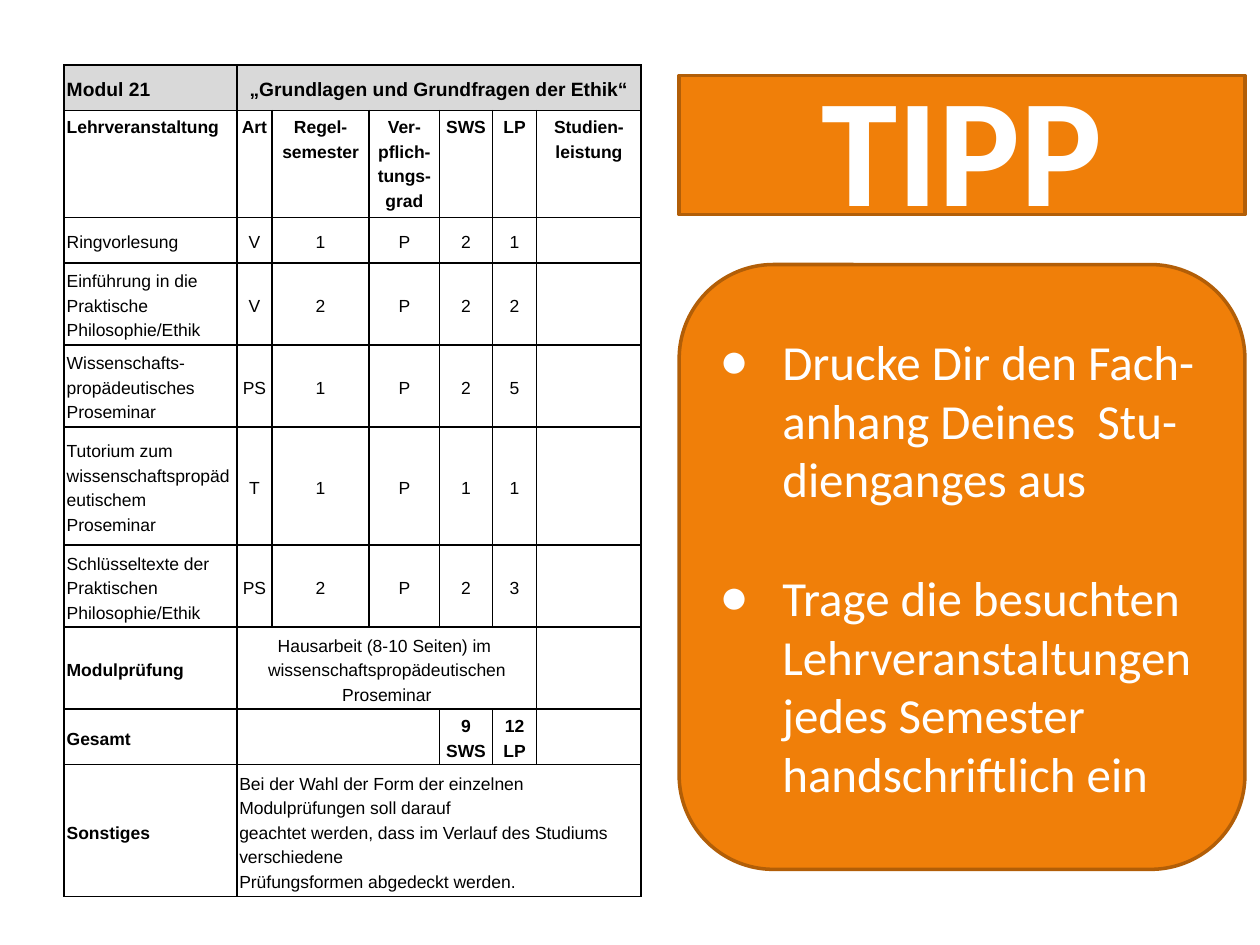
from dataclasses import dataclass

from lxml.etree import SubElement
from pptx import Presentation
from pptx.dml.color import RGBColor
from pptx.enum.text import MSO_ANCHOR as Anchor, MSO_AUTO_SIZE as AutoSize, PP_ALIGN as Align
from pptx.oxml import parse_xml
from pptx.oxml.ns import nsdecls, qn
from pptx.util import Inches, Pt

BLACK = RGBColor(0x00, 0x00, 0x00)
WHITE = RGBColor(0xFF, 0xFF, 0xFF)
GREY = RGBColor(0xD9, 0xD9, 0xD9)
ORANGE = RGBColor(0xF0, 0x7F, 0x09)
BROWN = RGBColor(0xB2, 0x5E, 0x07)

SLIDE_WIDTH, SLIDE_HEIGHT = Inches(10), Inches(7.5)
COLUMNS = [1.37, 0.28, 0.77, 0.56, 0.42, 0.35, 0.83]
ROWS = [0.36, 0.85, 0.36, 0.65, 0.65, 0.94, 0.65, 0.65, 0.44, 1.05]
TITLE_ROW, HEAD_ROW, EXAM_ROW = 0, 1, 7


@dataclass
class Area:
    """A rectangle in shares of the slide's size."""
    left: float
    top: float
    width: float
    height: float

    def box(self) -> tuple[int, int, int, int]:
        return (round(self.left * SLIDE_WIDTH), round(self.top * SLIDE_HEIGHT),
                round(self.width * SLIDE_WIDTH), round(self.height * SLIDE_HEIGHT))


@dataclass
class Entry:
    """Text of one table cell; each line is a paragraph."""
    row: int
    column: int
    text: str
    span: int = 1
    bold: bool = False
    align: Align = Align.CENTER


@dataclass
class Course:
    name: str
    kind: str
    semester: int
    hours: int
    credits: int


TABLE_AREA = Area(0.051, 0.069, 0.457, 0.88)
TITLE_AREA = Area(0.539, 0.08, 0.449, 0.147)
TIPS_AREA = Area(0.539, 0.28, 0.449, 0.64)

HEADINGS = ["Lehrveranstaltung", "Art", "Regel-\nsemester", "Ver-\npflich-\ntungs-grad",
            "SWS", "LP", "Studien-leistung"]
COURSES = [
    Course("Ringvorlesung", "V", 1, 2, 1),
    Course("Einführung in die Praktische Philosophie/Ethik", "V", 2, 2, 2),
    Course("Wissenschafts-propädeutisches Proseminar", "PS", 1, 2, 5),
    Course("Tutorium zum wissenschaftspropädeutischem Proseminar", "T", 1, 1, 1),
    Course("Schlüsseltexte der\nPraktischen Philosophie/Ethik", "PS", 2, 2, 3),
]
SUMMARY = [
    Entry(0, 0, "Modul 21", bold=True, align=Align.LEFT),
    Entry(0, 1, "„Grundlagen und Grundfragen der Ethik“", span=6, bold=True),
    Entry(7, 0, "Modulprüfung", bold=True, align=Align.LEFT),
    Entry(7, 1, "Hausarbeit (8-10 Seiten) im \nwissenschaftspropädeutischen Proseminar", span=5),
    Entry(8, 0, "Gesamt", bold=True, align=Align.LEFT),
    Entry(8, 1, "", span=3),
    Entry(8, 4, "9 SWS", bold=True),
    Entry(8, 5, "12 LP", bold=True),
    Entry(9, 0, "Sonstiges", bold=True, align=Align.LEFT),
    Entry(9, 1, "Bei der Wahl der Form der einzelnen Modulprüfungen soll darauf\n"
                "geachtet werden, dass im Verlauf des Studiums verschiedene\n"
                "Prüfungsformen abgedeckt werden.", span=6, align=Align.LEFT),
]
# A vertical tab is a line break within the list item
TIPS = ["Drucke Dir den Fach-\vanhang Deines  Stu-\vdienganges aus",
        "Trage die besuchten\vLehrveranstaltungen\vjedes Semester\vhandschriftlich ein"]


def table_entries() -> list[Entry]:
    entries = list(SUMMARY)
    lines = [(HEAD_ROW, HEADINGS)]
    for row, course in enumerate(COURSES, HEAD_ROW + 1):
        lines.append((row, [course.name, course.kind, course.semester, "P",
                            course.hours, course.credits]))
    for row, values in lines:
        for column, value in enumerate(values):
            entries.append(Entry(row, column, str(value), bold=row == HEAD_ROW,
                                 align=Align.CENTER if column else Align.LEFT))
    return entries


def format_cell(cell, row: int) -> None:
    cell.margin_left = cell.margin_right = Inches(0.02)
    cell.margin_top = cell.margin_bottom = Inches(0.02)
    cell.vertical_anchor = Anchor.TOP if row == HEAD_ROW else Anchor.MIDDLE
    properties = cell._tc.get_or_add_tcPr()
    for side in "LRTB":
        heavy = (row, side) in {(EXAM_ROW - 1, "B"), (EXAM_ROW, "T")}
        border = SubElement(properties, qn(f"a:ln{side}"), w=str(Pt(1.5 if heavy else 1)))
        SubElement(SubElement(border, qn("a:solidFill")), qn("a:srgbClr"), val=str(BLACK))
    if row == TITLE_ROW:
        cell.fill.solid()
        cell.fill.fore_color.rgb = GREY
    else:
        cell.fill.background()


def write_entry(table, entry: Entry) -> None:
    cell = table.cell(entry.row, entry.column)
    if entry.span > 1:
        cell.merge(table.cell(entry.row, entry.column + entry.span - 1))
    cell.text = entry.text
    for para in cell.text_frame.paragraphs:
        para.alignment = entry.align
        para.line_spacing = Pt(14)
        set_font(para, "Arial", 11 if entry.row == TITLE_ROW else 10, BLACK, entry.bold)


def set_font(para, name: str, size: float, color: RGBColor, bold: bool = False) -> None:
    para.font.name = name
    para.font.size = Pt(size)
    para.font.bold = bold
    para.font.color.rgb = color


def draw_module_table(page) -> None:
    table = page.shapes.add_table(len(ROWS), len(COLUMNS), *TABLE_AREA.box()).table
    table.first_row = table.horz_banding = False
    for column, width in zip(table.columns, COLUMNS):
        column.width = Inches(width)
    for row, height in enumerate(ROWS):
        table.rows[row].height = Inches(height)
        for column in range(len(COLUMNS)):
            format_cell(table.cell(row, column), row)
    for entry in table_entries():
        write_entry(table, entry)


def make_panel(holder, area: Area) -> None:
    """Turn a placeholder into a rounded orange panel."""
    holder.left, holder.top, holder.width, holder.height = area.box()
    outline = parse_xml(f'<a:prstGeom {nsdecls("a")} prst="roundRect"><a:avLst/></a:prstGeom>')
    holder._element.spPr.find(qn("a:xfrm")).addnext(outline)
    holder.fill.solid()
    holder.fill.fore_color.rgb = ORANGE
    holder.line.color.rgb = BROWN
    holder.line.width = Pt(2)
    frame = holder.text_frame
    frame.word_wrap = True
    frame.auto_size = AutoSize.NONE
    frame.vertical_anchor = Anchor.MIDDLE


def write_tips(holder) -> None:
    holder.text_frame.text = "\n".join(TIPS)
    for number, para in enumerate(holder.text_frame.paragraphs):
        set_font(para, "Calibri", 28, WHITE)
        para.alignment = Align.LEFT
        para.space_before = Pt(34 if number else 0)
        properties = para._p.get_or_add_pPr()
        properties.set("marL", str(Inches(0.5)))
        properties.set("indent", str(-Inches(0.5)))
        bullet = parse_xml(f'<a:buChar {nsdecls("a")} char="●"/>')
        properties.find(qn("a:defRPr")).addprevious(bullet)


def main() -> None:
    deck = Presentation()
    deck.slide_width, deck.slide_height = SLIDE_WIDTH, SLIDE_HEIGHT
    page = deck.slides.add_slide(deck.slide_layouts[1])

    # Tips on the right
    title, tips = page.shapes.title, page.placeholders[1]
    make_panel(tips, TIPS_AREA)
    write_tips(tips)
    make_panel(title, TITLE_AREA)
    title.text_frame.text = "TIPP"
    para = title.text_frame.paragraphs[0]
    para.alignment = Align.CENTER
    set_font(para, "Calibri", 88, WHITE, bold=True)

    # Module plan on the left
    draw_module_table(page)
    deck.save("out.pptx")


if __name__ == "__main__":
    main()
